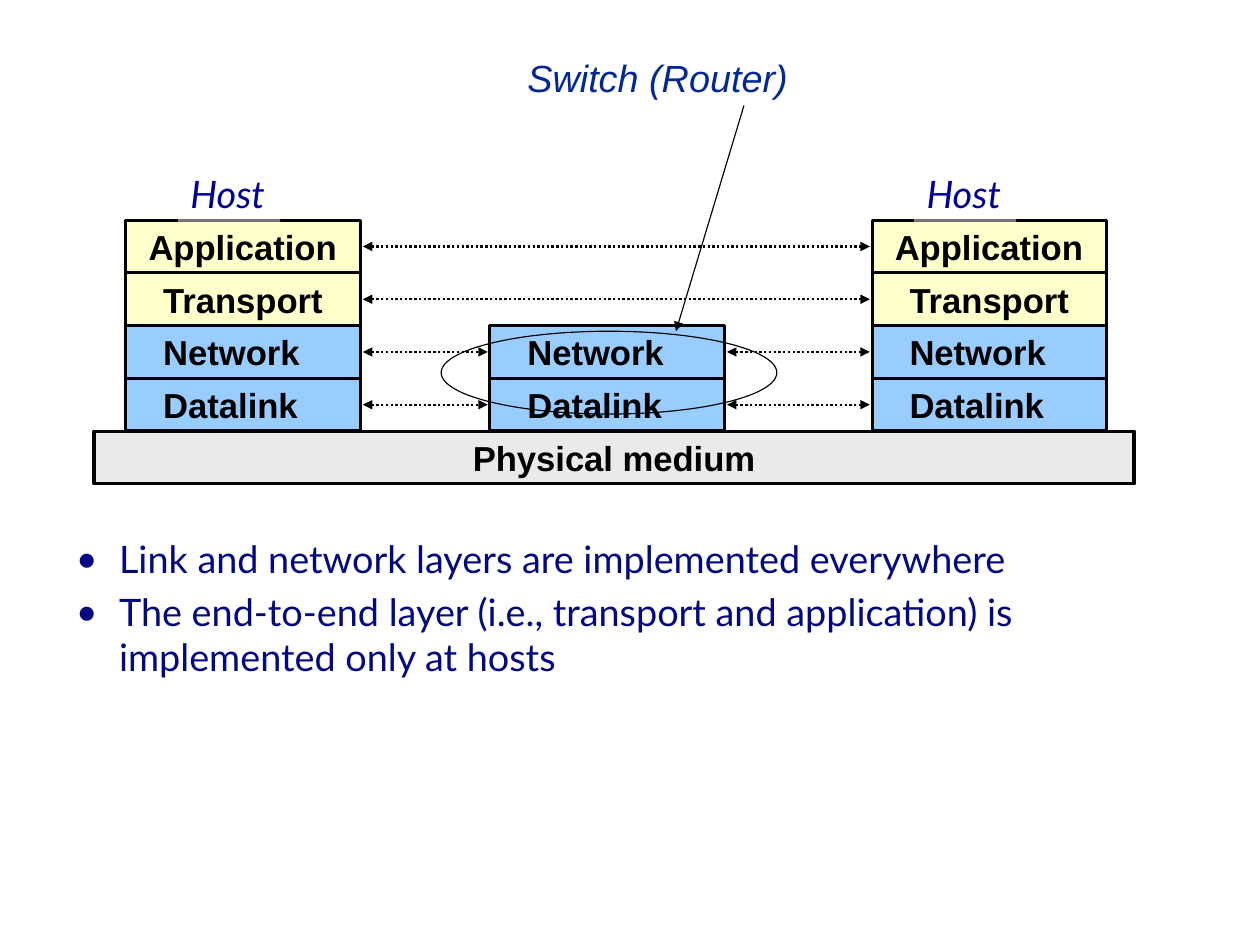
from pptx import Presentation
from pptx.dml.color import RGBColor
from pptx.enum.dml import MSO_LINE
from pptx.enum.shapes import MSO_CONNECTOR, MSO_SHAPE
from pptx.enum.text import MSO_ANCHOR, PP_ALIGN
from pptx.oxml.ns import qn
from pptx.util import Inches, Pt
from lxml import etree

RECT, OVAL = MSO_SHAPE.RECTANGLE, MSO_SHAPE.OVAL
LEFT, CENTER = PP_ALIGN.LEFT, PP_ALIGN.CENTER
TOP, MIDDLE = MSO_ANCHOR.TOP, MSO_ANCHOR.MIDDLE
DOTTED = MSO_LINE.ROUND_DOT

# Content: layer name, fill, text indent
LAYERS = [
    ("Application", "upper", 0.2),
    ("Transport", "upper", 0.33),
    ("Network", "lower", 0.33),
    ("Datalink", "lower", 0.33),
]
# Left edge and first layer of each stack
STACKS = [(1.11, 0), (4.32, 2), (7.69, 0)]
MEDIUM = "Physical medium"
HOSTS = [("Host", 1.57), ("Host", 8.06)]
SWITCH = "Switch (Router)"
POINTS = [
    "Link and network layers are implemented everywhere",
    "The end-to-end layer (i.e., transport and application) is "
    "implemented only at hosts",
]


class Theme:
    upper, lower, medium = "FFFFCC", "99CCFF", "EAEAEA"
    ink, white = "000000", "FFFFFF"
    host, switch, point = "000099", "002895", "010882"
    sans, body = "Arial", "Lato"
    label, large = 22, 24
    thick, dots, thin = 2, 1.5, 0.75


# Geometry in inches
FIRST, BASE = 1.94, 3.8
ROW = (BASE - FIRST) / len(LAYERS)
WIDE, GAP = 2.07, 0.02

deck = Presentation()
deck.slide_width, deck.slide_height = Inches(11.11), Inches(8.33)
slide = deck.slides.add_slide(deck.slide_layouts[6])


def rgb(code):
    return RGBColor.from_string(code)


def write(shape, lines, size=Theme.label, font=Theme.sans, color=Theme.ink,
          bold=False, italic=False, align=LEFT, anchor=MIDDLE,
          inset=0.11, pad=0.06, wrap=False, bullet=False):
    frame = shape.text_frame
    frame.word_wrap, frame.vertical_anchor = wrap, anchor
    frame.margin_left, frame.margin_right = Inches(inset), Inches(0.11)
    frame.margin_top = frame.margin_bottom = Inches(pad)
    frame.text = "\n".join(lines)
    for para in frame.paragraphs:
        para.alignment = align
        face = para.runs[0].font
        face.size, face.name, face.color.rgb = Pt(size), font, rgb(color)
        face.bold, face.italic = bold, italic
        if bullet:
            para.space_before = Pt(size * 0.2)
            props = para._p.get_or_add_pPr()
            props.set("marL", str(Inches(0.38)))
            props.set("indent", str(-Inches(0.38)))
            etree.SubElement(props, qn("a:buFont")).set("typeface", font)
            etree.SubElement(props, qn("a:buChar")).set("char", "•")


def draw(kind, x, y, w, h, fill=None, line=None):
    shape = slide.shapes.add_shape(kind, *map(Inches, (x, y, w, h)))
    shape.shadow.inherit = False
    if fill:
        shape.fill.solid()
        shape.fill.fore_color.rgb = rgb(fill)
    else:
        shape.fill.background()
    if line:
        shape.line.color.rgb = rgb(Theme.ink)
        shape.line.width = Pt(line)
    else:
        shape.line.fill.background()
    return shape


def note(x, y, w, h):
    return slide.shapes.add_textbox(*map(Inches, (x, y, w, h)))


def arrow(x1, y1, x2, y2, width, both=False):
    link = slide.shapes.add_connector(
        MSO_CONNECTOR.STRAIGHT, *map(Inches, (x1, y1, x2, y2)))
    link.line.color.rgb, link.line.width = rgb(Theme.ink), Pt(width)
    if both:
        link.line.dash_style = DOTTED
    line = link.line._get_or_add_ln()
    for end in ("a:headEnd", "a:tailEnd") if both else ("a:tailEnd",):
        etree.SubElement(line, qn(end)).set("type", "triangle")
    etree.SubElement(link._element.spPr, qn("a:effectLst"))


# Layer stacks
for x, first in STACKS:
    for row, (name, tone, inset) in enumerate(LAYERS):
        if row >= first:
            box = draw(RECT, x, FIRST + row * ROW, WIDE, ROW,
                       getattr(Theme, tone), Theme.thick)
            write(box, [name], bold=True, inset=inset)

# Physical medium
bar = draw(RECT, 0.83, BASE, 9.17, ROW, Theme.medium, Theme.thick)
write(bar, [MEDIUM], bold=True, align=CENTER)

# Links between neighbours that share a layer
for row in range(len(LAYERS)):
    peers = [x for x, first in STACKS if row >= first]
    y = FIRST + (row + 0.5) * ROW
    for x1, x2 in zip(peers, peers[1:]):
        arrow(x1 + WIDE + GAP, y, x2 - GAP, y, Theme.dots, both=True)

# Host labels on a translucent ground
for name, x in HOSTS:
    tag = draw(RECT, x, 1.44, 0.9, 0.52, Theme.white)
    tint = tag._element.spPr.find(qn("a:solidFill"))[0]
    etree.SubElement(tint, qn("a:alpha")).set("val", "46000")
    write(tag, [name], size=Theme.large, font=Theme.body,
          color=Theme.host, italic=True)

# Switch label pointing to the ringed layers
draw(OVAL, 3.89, 2.92, 2.96, 0.73, line=Theme.thin)
write(note(4.54, 0.42, 2.55, 0.52), [SWITCH], size=Theme.large,
      color=Theme.switch, italic=True)
arrow(6.56, 0.93, 5.96, 2.92, Theme.thin)

# Bullet points
write(note(0.56, 4.67, 9.81, 1.76), POINTS, size=Theme.large,
      font=Theme.body, color=Theme.point, anchor=TOP, pad=0.05,
      wrap=True, bullet=True)

deck.save("out.pptx")
